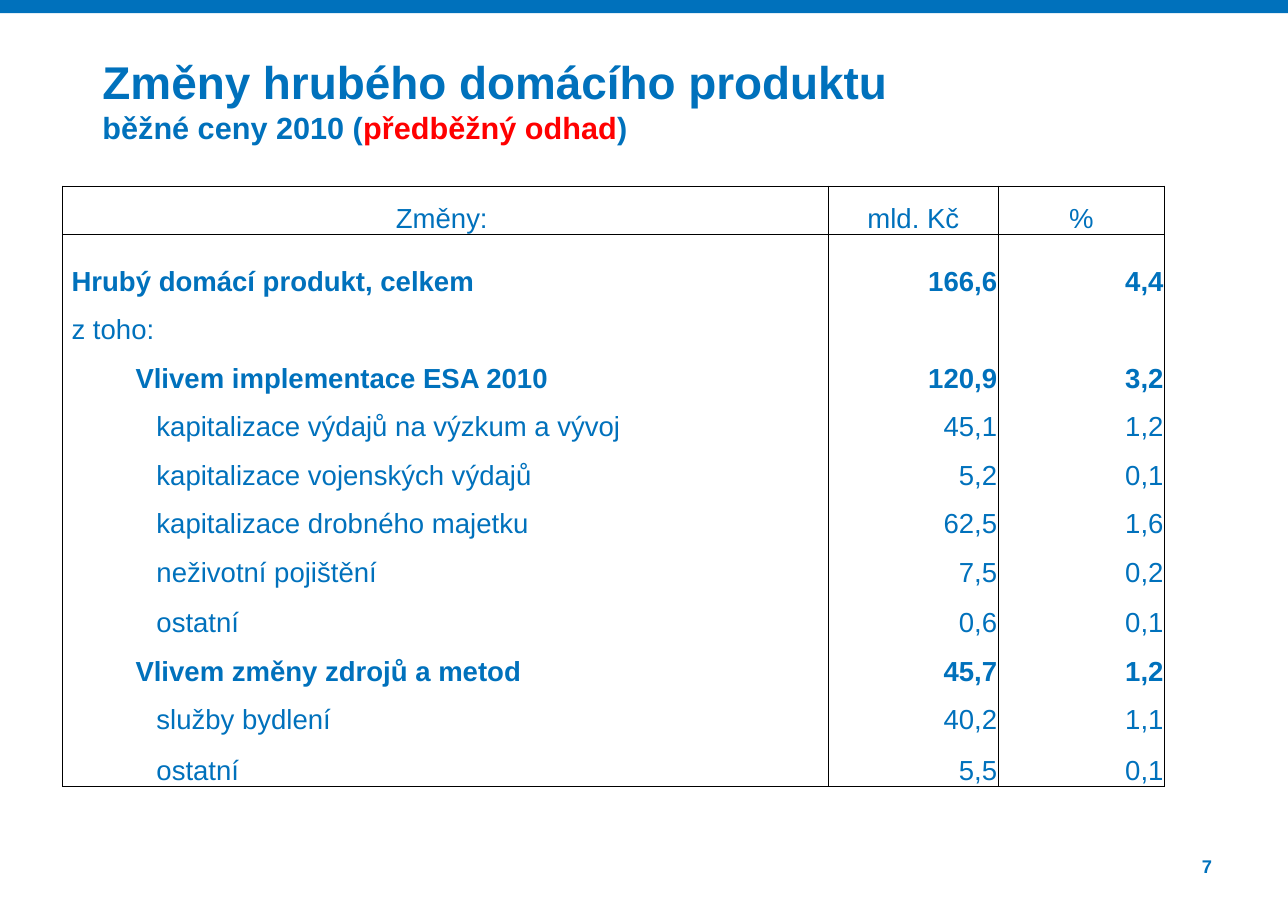
from lxml.etree import SubElement
from pptx import Presentation
from pptx.dml.color import RGBColor
from pptx.enum.shapes import MSO_SHAPE
from pptx.enum.text import MSO_ANCHOR, PP_ALIGN
from pptx.oxml.ns import qn
from pptx.util import Inches, Pt

COLORS = {"blue": "0071BC", "red": "FF0000", "black": "000000"}
FONT = "Arial"

TITLE = "Změny hrubého domácího produktu"
SUBTITLE = [("běžné ceny 2010 (", "blue"), ("předběžný odhad", "red"), (")", "blue")]
PAGE = "7"

HEADER = ("Změny:", "mld. Kč", "%")
# Level, label, billions of CZK, percent
ROWS = [
    ("total", "Hrubý domácí produkt, celkem", "166,6", "4,4"),
    ("note", "z toho:", "", ""),
    ("group", "Vlivem implementace ESA 2010", "120,9", "3,2"),
    ("item", "kapitalizace výdajů na výzkum a vývoj", "45,1", "1,2"),
    ("item", "kapitalizace vojenských výdajů", "5,2", "0,1"),
    ("item", "kapitalizace drobného majetku", "62,5", "1,6"),
    ("item", "neživotní pojištění", "7,5", "0,2"),
    ("item", "ostatní", "0,6", "0,1"),
    ("group", "Vlivem změny zdrojů a metod", "45,7", "1,2"),
    ("item", "služby bydlení", "40,2", "1,1"),
    ("item", "ostatní", "5,5", "0,1"),
]
INDENT = {"total": 0.08, "note": 0.08, "group": 0.66, "item": 0.85}
BOLD = {"total", "group"}
COL_WIDTHS = (6.95, 1.54, 1.51)
ROW_HEIGHT = 0.44
TALL_ROWS = {1: 0.57, 8: 0.46, 11: 0.46}


def add_run(p, text, size, color="blue", bold=False):
    r = p.add_run()
    r.text = text
    r.font.name, r.font.size, r.font.bold = FONT, Pt(size), bold
    r.font.color.rgb = RGBColor.from_string(COLORS[color])


def add_text_box(slide, left, top, width, height):
    tf = slide.shapes.add_textbox(*map(Inches, (left, top, width, height))).text_frame
    tf.word_wrap = True
    tf.margin_left = tf.margin_top = tf.margin_right = tf.margin_bottom = 0
    return tf.paragraphs[0]


def set_borders(cell, widths):
    """Draw the sides in order left, right, top, bottom; width 0 means no line."""
    tc_pr = cell._tc.get_or_add_tcPr()
    for side, width in zip("LRTB", widths):
        ln = SubElement(tc_pr, qn(f"a:ln{side}"), w=str(Pt(width)))
        if width:
            fill = SubElement(ln, qn("a:solidFill"))
            SubElement(fill, qn("a:srgbClr"), val=COLORS["black"])
        else:
            SubElement(ln, qn("a:noFill"))


def fill_cell(cell, text, align, bold, left, right, borders):
    set_borders(cell, borders)
    cell.fill.background()
    cell.vertical_anchor = MSO_ANCHOR.BOTTOM
    cell.margin_left, cell.margin_right = Inches(left), Inches(right)
    cell.margin_top, cell.margin_bottom = Inches(0.01), 0
    p = cell.text_frame.paragraphs[0]
    p.alignment = align
    if text:
        add_run(p, text, 18, bold=bold)


prs = Presentation()
prs.slide_width, prs.slide_height = Inches(11.69), Inches(8.27)
slide = prs.slides.add_slide(prs.slide_layouts[6])

# Top band
band = slide.shapes.add_shape(MSO_SHAPE.RECTANGLE, 0, 0, prs.slide_width, Inches(0.12))
band.shadow.inherit = False
band.fill.solid()
band.fill.fore_color.rgb = RGBColor.from_string(COLORS["blue"])
band.line.fill.background()

# Title
p = add_text_box(slide, 0.93, 0.49, 10.08, 1.06)
add_run(p, TITLE, 30, bold=True)
p.add_line_break()
for text, color in SUBTITLE:
    add_run(p, text, 20, color, bold=True)

# Table
heights = [TALL_ROWS.get(i, ROW_HEIGHT) for i in range(len(ROWS) + 1)]
frame = slide.shapes.add_table(len(heights), len(COL_WIDTHS), Inches(0.57), Inches(1.69),
                               Inches(sum(COL_WIDTHS)), Inches(sum(heights)))
table = frame.table
table.first_row = table.horz_banding = False
for col, width in zip(table.columns, COL_WIDTHS):
    col.width = Inches(width)
for row, height in zip(table.rows, heights):
    row.height = Inches(height)

for c, text in enumerate(HEADER):
    right = 0.08 if c == 0 else 0.01
    fill_cell(table.cell(0, c), text, PP_ALIGN.CENTER, False, 0.01, right, (1, 1, 1, 0.5))

for i, (level, *texts) in enumerate(ROWS, start=1):
    borders = (1, 1, 0.5 if i == 1 else 0, 1 if i == len(ROWS) else 0)
    for c, text in enumerate(texts):
        align = PP_ALIGN.RIGHT if c else PP_ALIGN.LEFT
        left = 0.01 if c else INDENT[level]
        fill_cell(table.cell(i, c), text, align, level in BOLD, left, 0.01, borders)

# Page number
p = add_text_box(slide, 10.22, 7.76, 0.78, 0.21)
p.alignment = PP_ALIGN.RIGHT
add_run(p, PAGE, 12, bold=True)

prs.save("out.pptx")
